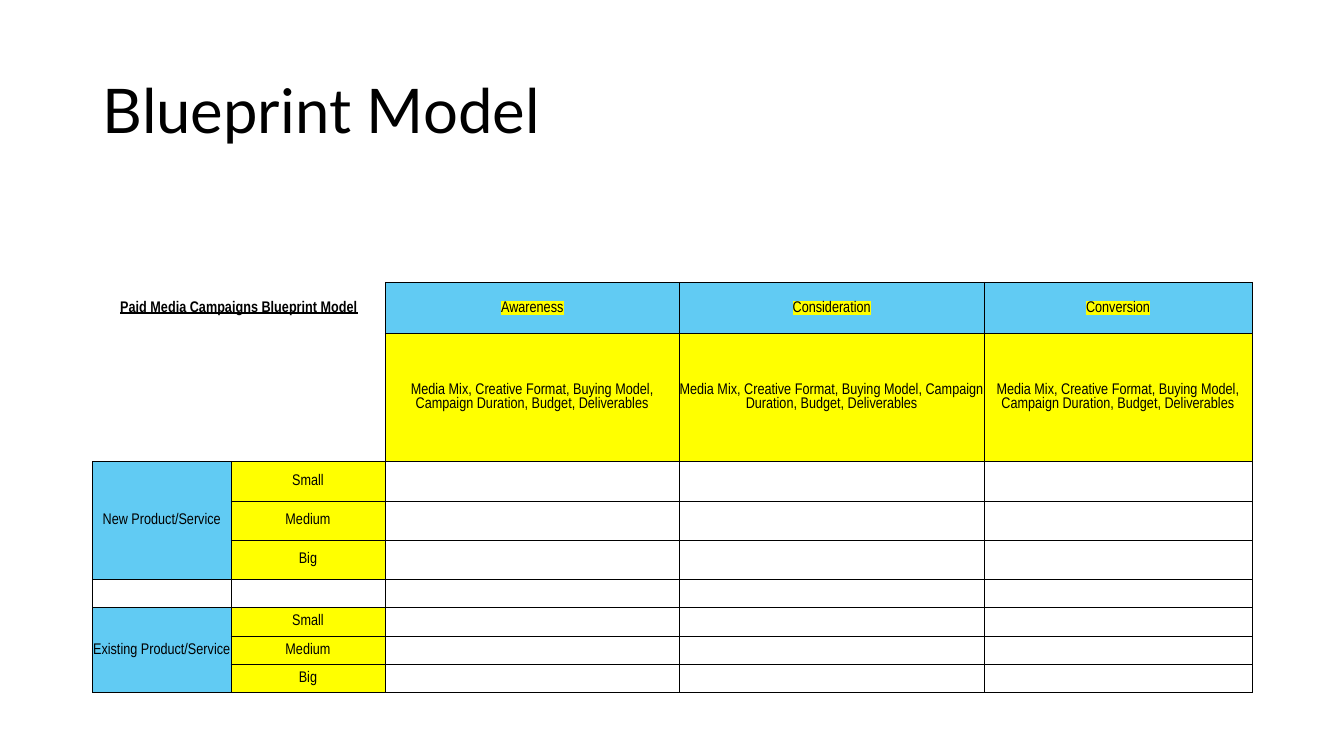
"""Build the Blueprint Model slide with its paid media campaign table."""
from dataclasses import dataclass
from typing import Optional

import pptx
import pptx.dml.color
import pptx.enum.text
import pptx.oxml
import pptx.oxml.ns
import pptx.table
import pptx.util

Inches = pptx.util.Inches
Pt = pptx.util.Pt
RGBColor = pptx.dml.color.RGBColor
PP_ALIGN = pptx.enum.text.PP_ALIGN
MIDDLE = pptx.enum.text.MSO_ANCHOR.MIDDLE

BLACK = RGBColor(0x00, 0x00, 0x00)
BLUE = RGBColor(0x61, 0xCB, 0xF3)
YELLOW = RGBColor(0xFF, 0xFF, 0x00)

NO_STYLE = "{2D5ABB26-0587-4C30-8999-92F81FD0307C}"
COLS = [1.37, 1.53, 2.92, 3.02, 2.66]
ROWS = [0.51, 1.27] + [0.39] * 3 + [0.28] * 4
STAGES = ["Awareness", "Consideration", "Conversion"]
SIZES = ["Small", "Medium", "Big"]
PRODUCTS = {2: "New Product/Service", 6: "Existing Product/Service"}
DETAILS = ("Media Mix, Creative Format, Buying Model, "
           "Campaign Duration, Budget, Deliverables")


@dataclass
class Label:
    row: int
    col: int
    text: str
    fill: Optional[RGBColor] = None
    highlight: Optional[RGBColor] = None
    heading: bool = False
    row_span: int = 1
    col_span: int = 1


def make_labels() -> list[Label]:
    labels = [Label(0, 0, "Paid Media Campaigns Blueprint Model", heading=True, col_span=2)]
    for col, stage in enumerate(STAGES, 2):
        labels.append(Label(0, col, stage, BLUE, YELLOW))
        labels.append(Label(1, col, DETAILS, YELLOW, YELLOW))
    for first, product in PRODUCTS.items():
        labels.append(Label(first, 0, product, BLUE, BLUE, row_span=len(SIZES)))
        for row, size in enumerate(SIZES, first):
            labels.append(Label(row, 1, size, YELLOW, YELLOW))
    return labels


def add_border(cell: pptx.table._Cell) -> None:
    tcPr = cell._tc.get_or_add_tcPr()
    for side in "LRTB":
        tcPr.append(pptx.oxml.parse_xml(
            f'<a:ln{side} {pptx.oxml.ns.nsdecls("a")} w="{Pt(0.5)}">'
            f'<a:solidFill><a:srgbClr val="{BLACK}"/></a:solidFill></a:ln{side}>'))


def prepare_cell(cell: pptx.table._Cell, bordered: bool) -> None:
    cell.margin_left = cell.margin_right = cell.margin_top = cell.margin_bottom = 0
    cell.vertical_anchor = MIDDLE
    if bordered:
        add_border(cell)
    cell.fill.background()
    cell.text_frame.paragraphs[0]._p.get_or_add_endParaRPr().set("sz", "1100")


def write_label(table: pptx.table.Table, label: Label) -> None:
    cell = table.cell(label.row, label.col)
    if label.row_span > 1 or label.col_span > 1:
        cell.merge(table.cell(label.row + label.row_span - 1,
                              label.col + label.col_span - 1))
    if label.fill is not None:
        cell.fill.solid()
        cell.fill.fore_color.rgb = label.fill
    p = cell.text_frame.paragraphs[0]
    p.text = label.text
    p.alignment = PP_ALIGN.CENTER
    r = p.runs[0]
    r.font.name = "Arial Narrow"
    r.font.size = Pt(11)
    r.font.bold = r.font.underline = label.heading
    r.font.color.rgb = BLACK
    if label.highlight is not None:
        r._r.rPr.find(pptx.oxml.ns.qn("a:solidFill")).addnext(pptx.oxml.parse_xml(
            f'<a:highlight {pptx.oxml.ns.nsdecls("a")}>'
            f'<a:srgbClr val="{label.highlight}"/></a:highlight>'))


def add_title(s: pptx.slide.Slide) -> None:
    sp = s.shapes.title
    sp.left, sp.top, sp.width, sp.height = map(Inches, (0.92, 0.4, 11.5, 1.45))
    tf = sp.text_frame
    tf.text = "Blueprint Model"
    tf.vertical_anchor = MIDDLE
    p = tf.paragraphs[0]
    p.alignment = PP_ALIGN.LEFT
    p.line_spacing = 0.9
    r = p.runs[0]
    r.font.name = "Lato"
    r.font.size = Pt(44)
    r.font.color.rgb = BLACK


def add_blueprint(s: pptx.slide.Slide) -> None:
    frame = s.shapes.add_table(len(ROWS), len(COLS), Inches(0.92), Inches(2.8),
                               Inches(sum(COLS)), Inches(sum(ROWS)))
    table = frame.table
    table._tbl.tblPr.find(pptx.oxml.ns.qn("a:tableStyleId")).text = NO_STYLE
    table.first_row = table.horz_banding = False
    for column, width in zip(table.columns, COLS):
        column.width = Inches(width)
    for row, height in zip(table.rows, ROWS):
        row.height = Inches(height)
    for row in range(len(ROWS)):
        for col in range(len(COLS)):
            prepare_cell(table.cell(row, col), row >= 2 or col >= 2)
    for label in make_labels():
        write_label(table, label)


def main() -> None:
    prs = pptx.Presentation()
    prs.slide_width, prs.slide_height = Inches(13.33), Inches(7.5)
    s = prs.slides.add_slide(prs.slide_layouts[5])
    add_title(s)
    add_blueprint(s)
    prs.save("out.pptx")


if __name__ == "__main__":
    main()
